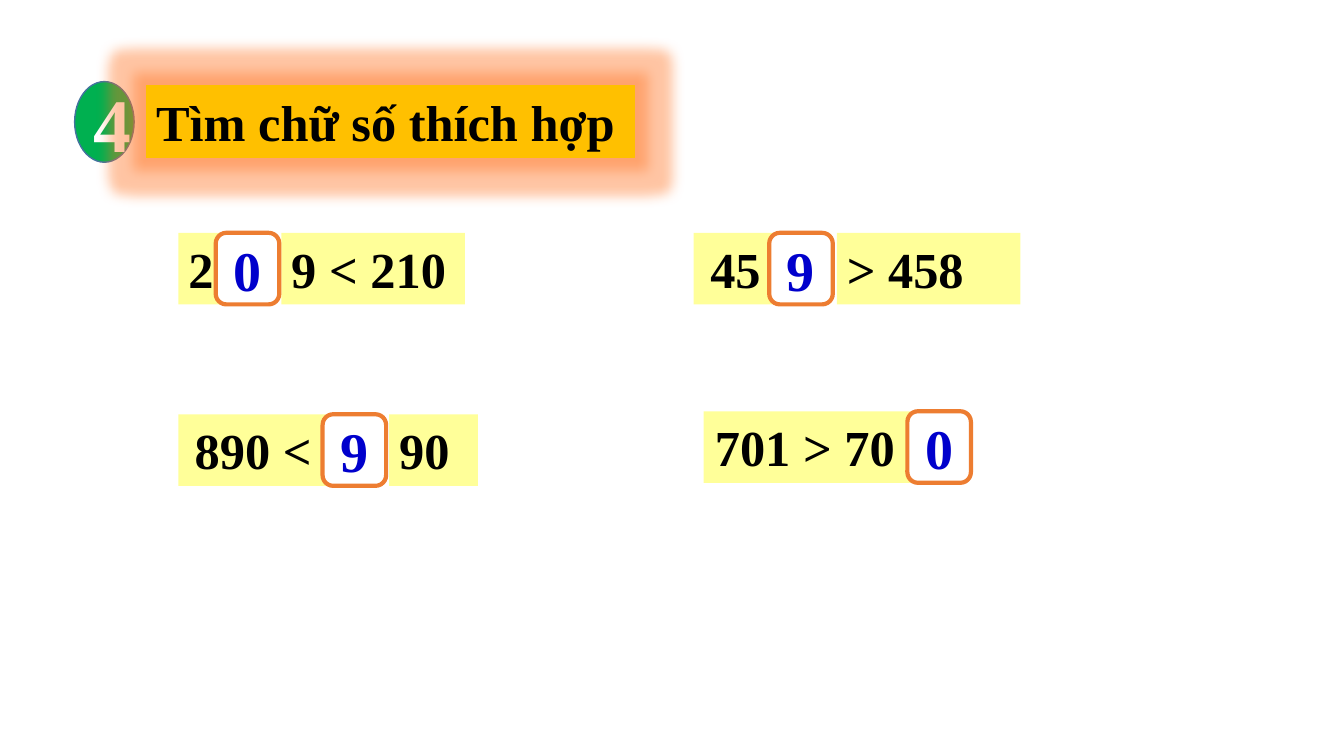
from lxml.etree import SubElement
from pptx import Presentation
from pptx.dml.color import RGBColor
from pptx.enum.shapes import MSO_SHAPE
from pptx.enum.text import MSO_ANCHOR, MSO_AUTO_SIZE, PP_ALIGN
from pptx.oxml.ns import qn
from pptx.util import Inches, Pt

COLORS = {
    "badge": "00B050", "badge_line": "43739E", "title": "FFC000", "glow": "FF701C",
    "strip": "FFFF99", "answer_line": "ED7D31", "answer": "0000CC",
    "white": "FFFFFF", "black": "000000",
}
FONT = "Times New Roman"
ROW_HEIGHT = 0.71
ANSWER_WIDTH = 0.63

# Per equation: left, top, strips (text, offset, width, alignment), answer, answer offset
EQUATIONS = [
    (1.77, 2.31, [("2", 0, 0.42, PP_ALIGN.CENTER),
                  ("9 < 210", 1.02, 1.82, PP_ALIGN.LEFT)], "0", 0.37),
    (6.88, 2.31, [("45", 0, 0.83, PP_ALIGN.CENTER),
                  ("> 458", 1.42, 1.82, PP_ALIGN.LEFT)], "9", 0.75),
    (1.77, 4.11, [("890 <", 0, 1.48, PP_ALIGN.CENTER),
                  ("90", 2.09, 0.88, PP_ALIGN.LEFT)], "9", 1.43),
    (6.98, 4.08, [("701 > 70 ", 0, 2.13, PP_ALIGN.CENTER)], "0", 2.02),
]


def color(name):
    return RGBColor.from_string(COLORS[name])


def add_box(shapes, kind, box, fill, text, size, text_color,
            line=None, line_width=1, align=PP_ALIGN.CENTER, grow=False):
    shape = shapes.add_shape(kind, *(Inches(length) for length in box))
    shape.shadow.inherit = False
    shape.fill.solid()
    shape.fill.fore_color.rgb = color(fill)
    if line:
        shape.line.color.rgb = color(line)
        shape.line.width = Pt(line_width)
    else:
        shape.line.fill.background()
    frame = shape.text_frame
    frame.word_wrap = True
    frame.vertical_anchor = MSO_ANCHOR.TOP if grow else MSO_ANCHOR.MIDDLE
    if grow:
        frame.auto_size = MSO_AUTO_SIZE.SHAPE_TO_FIT_TEXT
    para = frame.paragraphs[0]
    para.alignment = align
    span = para.add_run()
    span.text = text
    span.font.name = FONT
    span.font.size = Pt(size)
    span.font.bold = True
    span.font.color.rgb = color(text_color)
    return shape


def add_glow(shape, radius, opacity):
    effects = shape._element.spPr.find(qn("a:effectLst"))
    glow = SubElement(effects, qn("a:glow"), rad=str(radius))
    tint = SubElement(glow, qn("a:srgbClr"), val=COLORS["glow"])
    SubElement(tint, qn("a:alpha"), val=str(opacity * 1000))


def add_heading(page, left, top):
    # Exercise number
    add_box(page.shapes, MSO_SHAPE.OVAL, (left, top, 0.59, 0.8), "badge",
            "4", 54, "white", line="badge_line")
    # Glowing title bar
    title = add_box(page.shapes, MSO_SHAPE.RECTANGLE,
                    (left + 0.71, top + 0.04, 4.84, ROW_HEIGHT), "title",
                    "Tìm chữ số thích hợp", 36, "black", line="title",
                    line_width=0.75, align=PP_ALIGN.LEFT, grow=True)
    add_glow(title, Inches(0.25), 40)


def add_equation(page, left, top, strips, answer, answer_offset):
    # Printed parts of the comparison
    group = page.shapes.add_group_shape()
    for text, offset, width, align in strips:
        add_box(group.shapes, MSO_SHAPE.RECTANGLE,
                (left + offset, top, width, ROW_HEIGHT), "strip",
                text, 36, "black", align=align, grow=True)
    # Missing digit
    add_box(page.shapes, MSO_SHAPE.ROUNDED_RECTANGLE,
            (left + answer_offset, top, ANSWER_WIDTH, ROW_HEIGHT), "white",
            answer, 40, "answer", line="answer_line", line_width=3)


def main():
    deck = Presentation()
    deck.slide_width = Inches(13.33)
    deck.slide_height = Inches(7.5)
    page = deck.slides.add_slide(deck.slide_layouts[6])
    add_heading(page, 0.74, 0.81)
    for equation in EQUATIONS:
        add_equation(page, *equation)
    deck.save("out.pptx")


if __name__ == "__main__":
    main()
